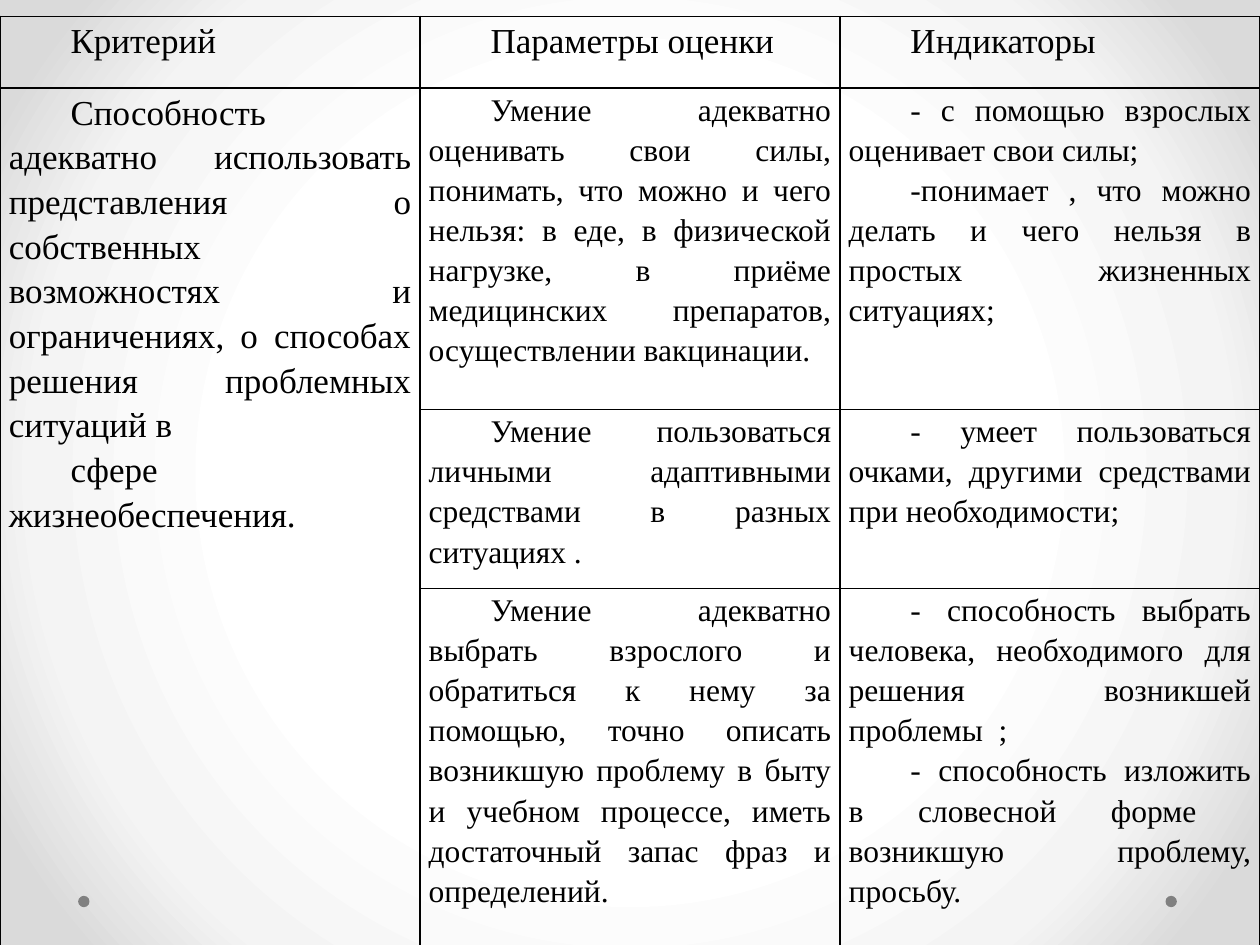
import pptx
import pptx.util
import pptx.dml.color
import pptx.enum.shapes
import pptx.enum.text
import pptx.oxml
import pptx.oxml.ns


def colour(value):
    return pptx.dml.color.RGBColor.from_string(value)


def xml(body):
    return pptx.oxml.parse_xml(body.replace(">", f" {pptx.oxml.ns.nsdecls('a')}>", 1))


deck = pptx.Presentation()
deck.slide_width = pptx.util.Inches(10)
deck.slide_height = pptx.util.Inches(7.5)
width, height = deck.slide_width, deck.slide_height
page = deck.slides.add_slide(deck.slide_layouts[6])

page.background.fill.gradient()
gradient = page.element.find(".//" + pptx.oxml.ns.qn("a:gradFill"))
for child in list(gradient):
    gradient.remove(child)
stops = "".join(
    f'<a:gs pos="{share * 1000}"><a:srgbClr val="{tone}"/></a:gs>'
    for share, tone in [(50, "FFFFFF"), (76, "F4F4F4"), (92, "DADADA")]
)
gradient.append(xml(f"<a:gsLst>{stops}</a:gsLst>"))
gradient.append(xml(
    '<a:path path="circle"><a:fillToRect l="50000" t="50000" r="50000" b="50000"/></a:path>'
))

dot_size = int(width * 0.009)
for share in (0.925, 0.062):
    dot = page.shapes.add_shape(
        pptx.enum.shapes.MSO_SHAPE.OVAL,
        int(width * share), int(height * 0.948), dot_size, dot_size,
    )
    dot.shadow.inherit = False
    dot.fill.solid()
    dot.fill.fore_color.rgb = colour("808080")
    dot.line.fill.background()

rows = [
    [["Критерий"], ["Параметры оценки"], ["Индикаторы"]],
    [
        [
            "Способность адекватно использовать представления о собственных возможностях и ограничениях, о способах решения проблемных ситуаций в",
            "сфере жизнеобеспечения.",
        ],
        ["Умение адекватно оценивать свои силы, понимать, что можно и чего нельзя: в еде, в физической нагрузке, в приёме медицинских препаратов, осуществлении вакцинации."],
        [
            "- с помощью взрослых оценивает свои силы;",
            "-понимает , что можно делать и чего нельзя в простых жизненных ситуациях;",
        ],
    ],
    [
        [],
        ["Умение пользоваться личными адаптивными средствами в разных ситуациях ."],
        ["- умеет пользоваться очками, другими средствами при необходимости;"],
    ],
    [
        [],
        ["Умение адекватно выбрать взрослого и обратиться к нему за помощью, точно описать возникшую проблему в быту и учебном процессе, иметь достаточный запас фраз и определений."],
        [
            "- способность выбрать человека, необходимого для решения возникшей проблемы  ;",
            "- способность изложить в словесной форме  возникшую проблему, просьбу.",
        ],
    ],
]
row_heights = [pptx.util.Inches(size) for size in (0.57, 2.55, 1.42, 3.1)]
table = page.shapes.add_table(
    len(rows), 3, 0, pptx.util.Inches(0.13), width, sum(row_heights)
).table
table.first_row = False
table.horz_banding = False
for column in table.columns:
    column.width = width // 3
for row, size in zip(table.rows, row_heights):
    row.height = size
table.cell(1, 0).merge(table.cell(3, 0))

for row_index, row in enumerate(rows):
    for column_index, texts in enumerate(row):
        cell = table.cell(row_index, column_index)
        cell.margin_left = cell.margin_right = pptx.util.Inches(0.07)
        cell.margin_top = cell.margin_bottom = 0
        cell.fill.background()
        properties = cell._tc.get_or_add_tcPr()
        for position, side in enumerate("LRTB"):
            properties.insert(position, xml(
                f'<a:ln{side} w="12700"><a:solidFill><a:srgbClr val="000000"/></a:solidFill></a:ln{side}>'
            ))
        if not texts:
            continue
        cell.text = "\n".join(texts)
        for para in cell.text_frame.paragraphs:
            para.alignment = pptx.enum.text.PP_ALIGN.JUSTIFY
            para.line_spacing = 1.15
            para.font.name = "Times New Roman"
            para.font.size = pptx.util.Pt(20 if row_index == 0 or column_index == 0 else 18)
            para.font.color.rgb = colour("000000")
            indent = para._p.get_or_add_pPr()
            indent.set("marL", "0")
            indent.set("indent", str(pptx.util.Inches(0.49)))

deck.save("out.pptx")
